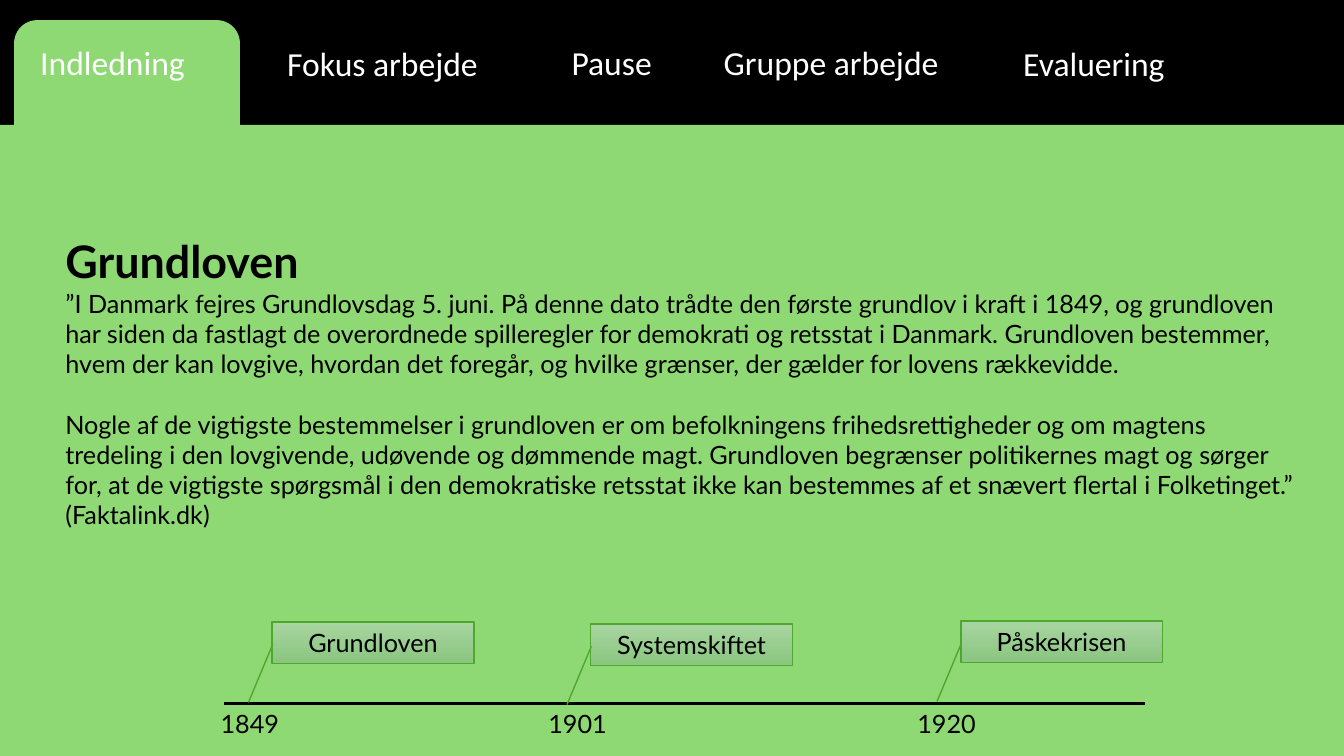
"""Build the Grundloven slide with section tabs and a timeline."""
from lxml import etree
from pptx import Presentation
from pptx import util as u
from pptx.dml.color import RGBColor
from pptx.enum import shapes, text
from pptx.oxml.ns import qn

BLACK = RGBColor(0x00, 0x00, 0x00)
WHITE = RGBColor(0xFF, 0xFF, 0xFF)
PANEL = RGBColor(0x8E, 0xD9, 0x73)
BORDER = RGBColor(0x4E, 0xA7, 0x2E)
SHADES = (RGBColor(0xA8, 0xD5, 0xA0), RGBColor(0x8A, 0xC6, 0x80))

TABS = [
    ("Indledning", 0.3, 0.37, 2.15),
    ("Fokus arbejde", 2.75, 0.38, 2.52),
    ("Pause", 5.57, 0.37, 1.21),
    ("Gruppe arbejde", 7.08, 0.37, 2.67),
    ("Evaluering", 10.05, 0.38, 2.15),
]
HEADING = "Grundloven"
BODY = [
    "”I Danmark fejres Grundlovsdag 5. juni. På denne dato trådte den første "
    "grundlov i kraft i 1849, og grundloven har siden da fastlagt de overordnede "
    "spilleregler for demokrati og retsstat i Danmark. Grundloven bestemmer, hvem "
    "der kan lovgive, hvordan det foregår, og hvilke grænser, der gælder for "
    "lovens rækkevidde.",
    "Nogle af de vigtigste bestemmelser i grundloven er om befolkningens "
    "frihedsrettigheder og om magtens tredeling i den lovgivende, udøvende og "
    "dømmende magt. Grundloven begrænser politikernes magt og sørger for, at de "
    "vigtigste spørgsmål i den demokratiske retsstat ikke kan bestemmes af et "
    "snævert flertal i Folketinget.” (Faktalink.dk)",
]
EVENTS = [
    ("1849", 2.09, "Grundloven", 2.7, 6.17),
    ("1901", 5.34, "Systemskiftet", 5.86, 6.19),
    ("1920", 9.0, "Påskekrisen", 9.53, 6.16),
]
AXIS = (2.22, 11.36, 6.98)
CALLOUT = (0.538, 0.003, 1.95, -0.118)

TAB_FONT = {"name": "Calibri", "size": u.Pt(24)}
HEADING_FONT = {"name": "Lato", "size": u.Pt(32), "bold": True}
BODY_FONT = {"name": "Lato", "size": u.Pt(18)}


def add_run(p, words, font, color):
    r = p.add_run()
    r.text = words
    for name, value in font.items():
        setattr(r.font, name, value)
    r.font.color.rgb = color


def add_textbox(parent, x, y, w, h):
    tf = parent.add_textbox(*map(u.Inches, (x, y, w, h))).text_frame
    tf.word_wrap = True
    tf.auto_size = text.MSO_AUTO_SIZE.SHAPE_TO_FIT_TEXT
    return tf


def add_panel(parent, kind, x, y, w, h):
    sp = parent.add_shape(kind, *map(u.Inches, (x, y, w, h)))
    sp.shadow.inherit = False
    sp.fill.solid()
    sp.fill.fore_color.rgb = PANEL
    sp.line.fill.background()


def add_callout(parent, label, x, y):
    sp = parent.add_shape(shapes.MSO_SHAPE.LINE_CALLOUT_1,
                          *map(u.Inches, (x, y, 2, 0.41)))
    sp.shadow.inherit = False
    for i, value in enumerate(CALLOUT):
        sp.adjustments[i] = value
    sp.fill.gradient()
    sp.fill.gradient_angle = 270
    for stop, color in zip(sp.fill.gradient_stops, SHADES):
        stop.color.rgb = color
    sp.line.color.rgb = BORDER
    sp.line.width = u.Pt(1)
    tf = sp.text_frame
    tf.vertical_anchor = text.MSO_ANCHOR.MIDDLE
    p = tf.paragraphs[0]
    p.alignment = text.PP_ALIGN.CENTER
    add_run(p, label, BODY_FONT, BLACK)


def main():
    prs = Presentation()
    prs.slide_width, prs.slide_height = u.Inches(13.33), u.Inches(7.5)
    s = prs.slides.add_slide(prs.slide_layouts[6])
    s.background.fill.solid()
    s.background.fill.fore_color.rgb = BLACK

    folder = s.shapes.add_group_shape().shapes
    add_panel(folder, shapes.MSO_SHAPE.ROUNDED_RECTANGLE, 0.14, 0.2, 2.24, 1.37)
    add_panel(folder, shapes.MSO_SHAPE.RECTANGLE, 0, 1.24, 13.33, 6.26)

    for label, x, y, w in TABS:
        tf = add_textbox(s.shapes, x, y, w, 0.5)
        add_run(tf.paragraphs[0], label, TAB_FONT, WHITE)

    tf = add_textbox(s.shapes, 0.55, 1.74, 12.46, 4.33)
    p = tf.paragraphs[0]
    p.line_spacing = 2.0
    add_run(p, HEADING, HEADING_FONT, BLACK)
    for i, words in enumerate(BODY):
        p = tf.add_paragraph()
        p.space_before = u.Pt(21.6 * i)
        add_run(p, words, BODY_FONT, BLACK)

    timeline = s.shapes.add_group_shape().shapes
    left, right, y = map(u.Inches, AXIS)
    axis = timeline.add_connector(shapes.MSO_CONNECTOR.STRAIGHT, left, y, right, y)
    axis.line.color.rgb = BLACK
    axis.line.width = u.Pt(2)
    etree.SubElement(axis.element.spPr, qn("a:effectLst"))
    for year, year_x, label, x, y in EVENTS:
        add_callout(timeline, label, x, y)
        tf = add_textbox(timeline, year_x, AXIS[2], 1, 0.32)
        add_run(tf.paragraphs[0], year, BODY_FONT, BLACK)

    prs.save("out.pptx")


if __name__ == "__main__":
    main()
